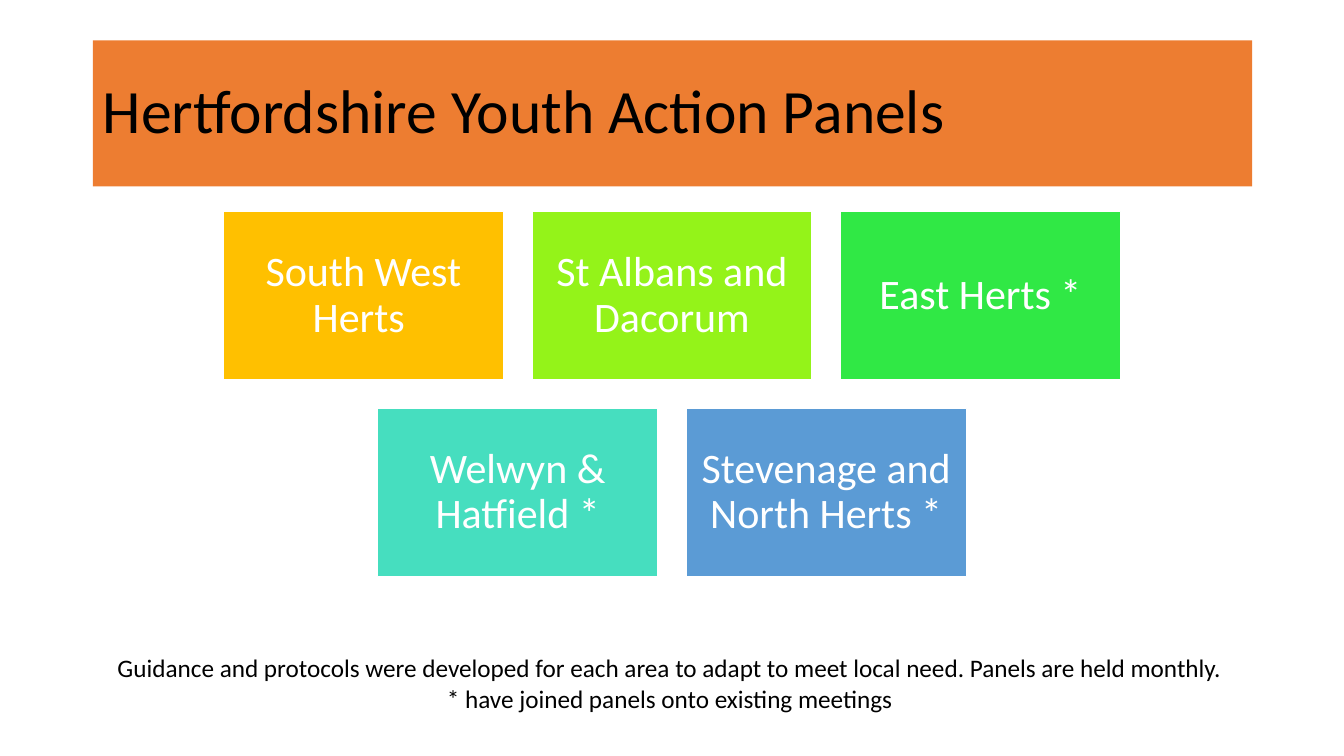
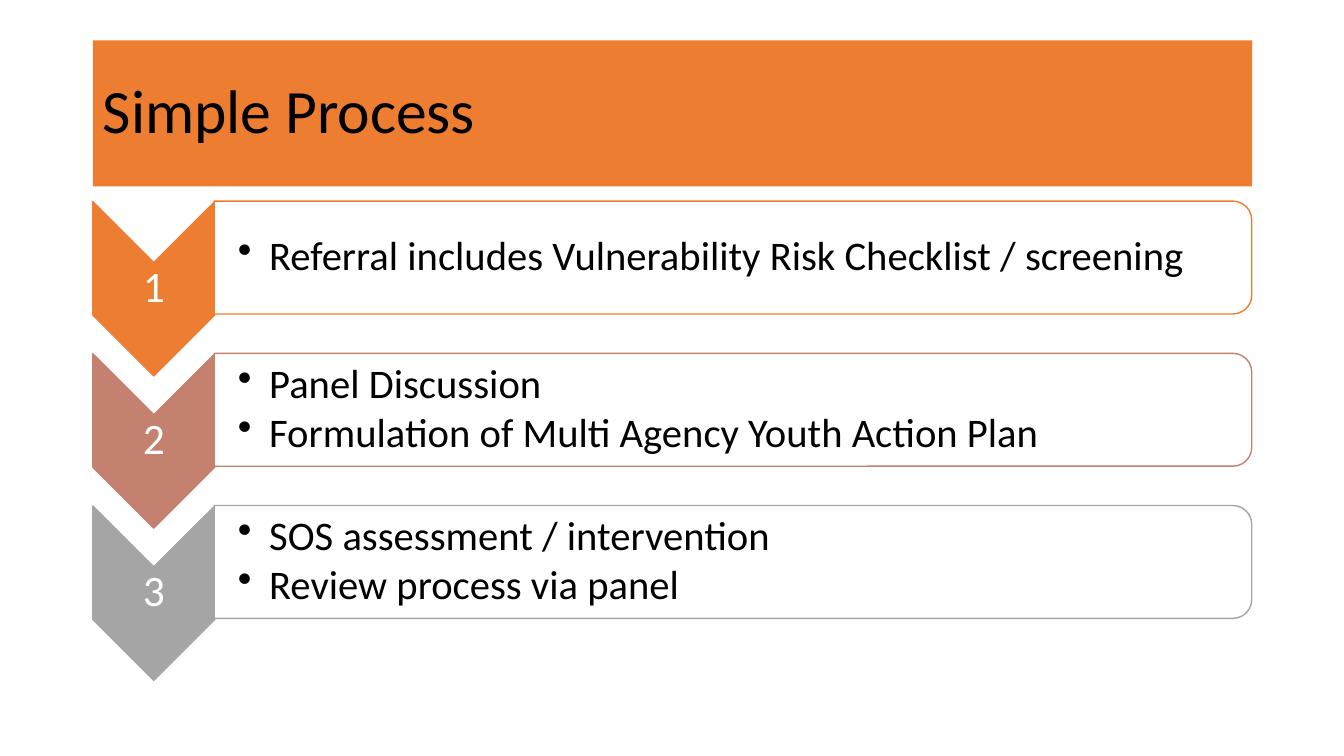
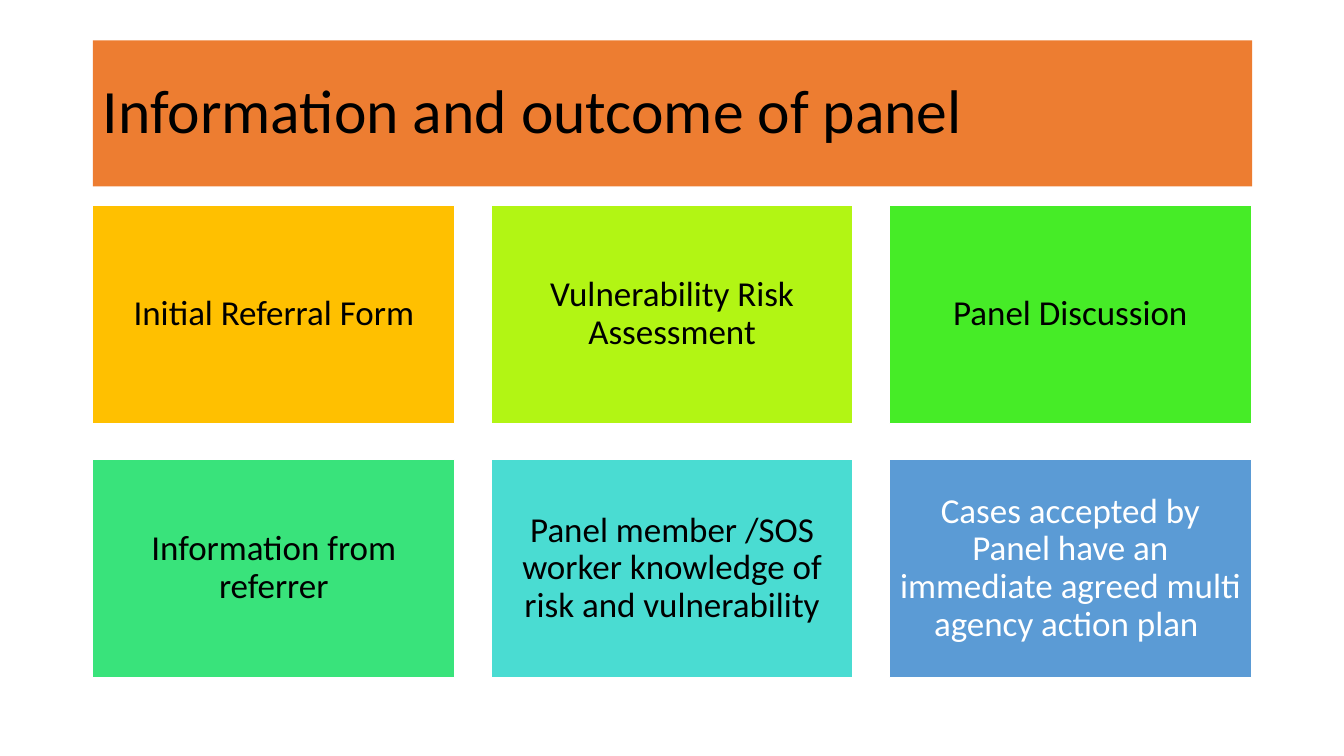
"""Build three slides on youth action panels: areas, process and outcome."""
from lxml.etree import SubElement
from pptx import Presentation
from pptx.dml.color import RGBColor
from pptx.enum.shapes import MSO_SHAPE
from pptx.enum.text import MSO_ANCHOR, PP_ALIGN
from pptx.oxml.ns import qn
from pptx.util import Inches, Pt

FONT = "Calibri"
WIDTH = 13.33
BLACK = RGBColor(0x00, 0x00, 0x00)
WHITE = RGBColor(0xFF, 0xFF, 0xFF)
ORANGE = RGBColor(0xED, 0x7D, 0x31)
ROSE = RGBColor(0xC4, 0x81, 0x70)
GREY = RGBColor(0xA5, 0xA5, 0xA5)
GOLD = RGBColor(0xFF, 0xC0, 0x00)
LIME = RGBColor(0x94, 0xF3, 0x19)
GREEN = RGBColor(0x30, 0xE8, 0x45)
TEAL = RGBColor(0x46, 0xDE, 0xBF)
BLUE = RGBColor(0x5B, 0x9B, 0xD5)
CITRUS = RGBColor(0xB2, 0xF5, 0x14)
GRASS = RGBColor(0x46, 0xEC, 0x27)
MINT = RGBColor(0x39, 0xE3, 0x7B)
AQUA = RGBColor(0x4A, 0xDC, 0xD2)


def write(shape, lines, size, color, align=PP_ALIGN.CENTER, inset=0.1, lead=0.9):
    frame = shape.text_frame
    frame.word_wrap = True
    frame.vertical_anchor = MSO_ANCHOR.MIDDLE
    frame.margin_left = frame.margin_right = Inches(inset)
    frame.margin_top = frame.margin_bottom = Inches(min(inset, 0.05))
    frame.text = "\n".join(lines)
    for para in frame.paragraphs:
        para.alignment = align
        para.line_spacing = lead
        para.font.name = FONT
        para.font.size = Pt(size)
        para.font.color.rgb = color


def draw(slide, kind, box, fill, line):
    shape = slide.shapes.add_shape(kind, *map(Inches, box))
    shape.shadow.inherit = False
    shape.fill.solid()
    shape.fill.fore_color.rgb = fill
    shape.line.color.rgb = line
    shape.line.width = Pt(1)
    return shape


deck = Presentation()
deck.slide_width, deck.slide_height = Inches(WIDTH), Inches(7.5)

slides = []
for text in ("Hertfordshire Youth Action Panels", "Simple Process",
             "Information and outcome of panel"):
    slide = deck.slides.add_slide(deck.slide_layouts[5])
    title = slide.shapes.title
    title.left, title.top = Inches(0.92), Inches(0.4)
    title.width, title.height = Inches(11.5), Inches(1.45)
    title.fill.solid()
    title.fill.fore_color.rgb = ORANGE
    write(title, [text], 44, BLACK, PP_ALIGN.LEFT)
    slides.append(slide)
areas, process, outcome = slides

area_rows = [
    [("South West Herts ", GOLD, WHITE),
     ("St Albans and Dacorum", LIME, WHITE),
     ("East Herts *", GREEN, WHITE)],
    [("Welwyn & Hatfield *", TEAL, WHITE),
     ("Stevenage and North Herts *", BLUE, WHITE)],
]
outcome_rows = [
    [("Initial Referral Form", GOLD, BLACK),
     ("Vulnerability Risk Assessment", CITRUS, BLACK),
     ("Panel Discussion", GRASS, BLACK)],
    [("Information from referrer", MINT, BLACK),
     ("Panel member /SOS worker knowledge of risk and vulnerability", AQUA, BLACK),
     ("Cases accepted by Panel have an immediate agreed multi agency action plan ",
      BLUE, WHITE)],
]
grids = [
    (areas, area_rows, 2.1, 2.78, 1.67, 0.28, 30, 0.12),
    (outcome, outcome_rows, 2.04, 3.59, 2.16, 0.36, 25, 0.1),
]
for slide, rows, top, wide, high, gap, size, inset in grids:
    for row, tiles in enumerate(rows):
        left = (WIDTH - len(tiles) * (wide + gap) + gap) / 2
        for col, (text, fill, ink) in enumerate(tiles):
            box = (left + col * (wide + gap), top + row * (high + gap), wide, high)
            tile = draw(slide, MSO_SHAPE.RECTANGLE, box, fill, WHITE)
            write(tile, [text], size, ink, inset=inset)

note = areas.shapes.add_textbox(Inches(0.92), Inches(6.42), Inches(11.5), Inches(0.71))
write(note, ["Guidance and protocols were developed for each area to adapt to meet "
             "local need. Panels are held monthly. ",
             "* have joined panels onto existing meetings "], 18, BLACK, lead=1.0)

steps = [
    (ORANGE, ["Referral includes Vulnerability Risk Checklist / screening"]),
    (ROSE, ["Panel Discussion", "Formulation of Multi Agency Youth Action Plan"]),
    (GREY, ["SOS assessment / intervention", "Review process via panel"]),
]
for step, (color, lines) in enumerate(steps):
    down = step * 1.51
    arrow = draw(process, MSO_SHAPE.CHEVRON, (0.66, 2.26 + down, 1.73, 1.21), color, color)
    arrow.rotation = 90
    panel = draw(process, MSO_SHAPE.ROUND_2_SAME_RECTANGLE,
                 (6.71, down - 2.59, 1.12, 10.29), WHITE, color)
    panel.rotation = 90
    label = process.shapes.add_textbox(
        Inches(0.92), Inches(2.6 + down), Inches(1.21), Inches(0.52))
    write(label, [str(step + 1)], 31, WHITE, inset=0.02)
    points = process.shapes.add_textbox(
        Inches(2.13), Inches(2.05 + down), Inches(10.24), Inches(1.01))
    write(points, lines, 29, BLACK, PP_ALIGN.LEFT, 0.02)
    points.text_frame.margin_left = Inches(0.23)
    for para in points.text_frame.paragraphs:
        para.space_after = Pt(4)
        props = para._p.get_or_add_pPr()
        props.set("marL", str(Inches(0.31)))
        props.set("indent", str(Inches(-0.31)))
        bullet = SubElement(props, qn("a:buChar"))
        bullet.set("char", "•")
        props.insert_element_before(bullet, "a:tabLst", "a:defRPr", "a:extLst")

deck.save("out.pptx")
